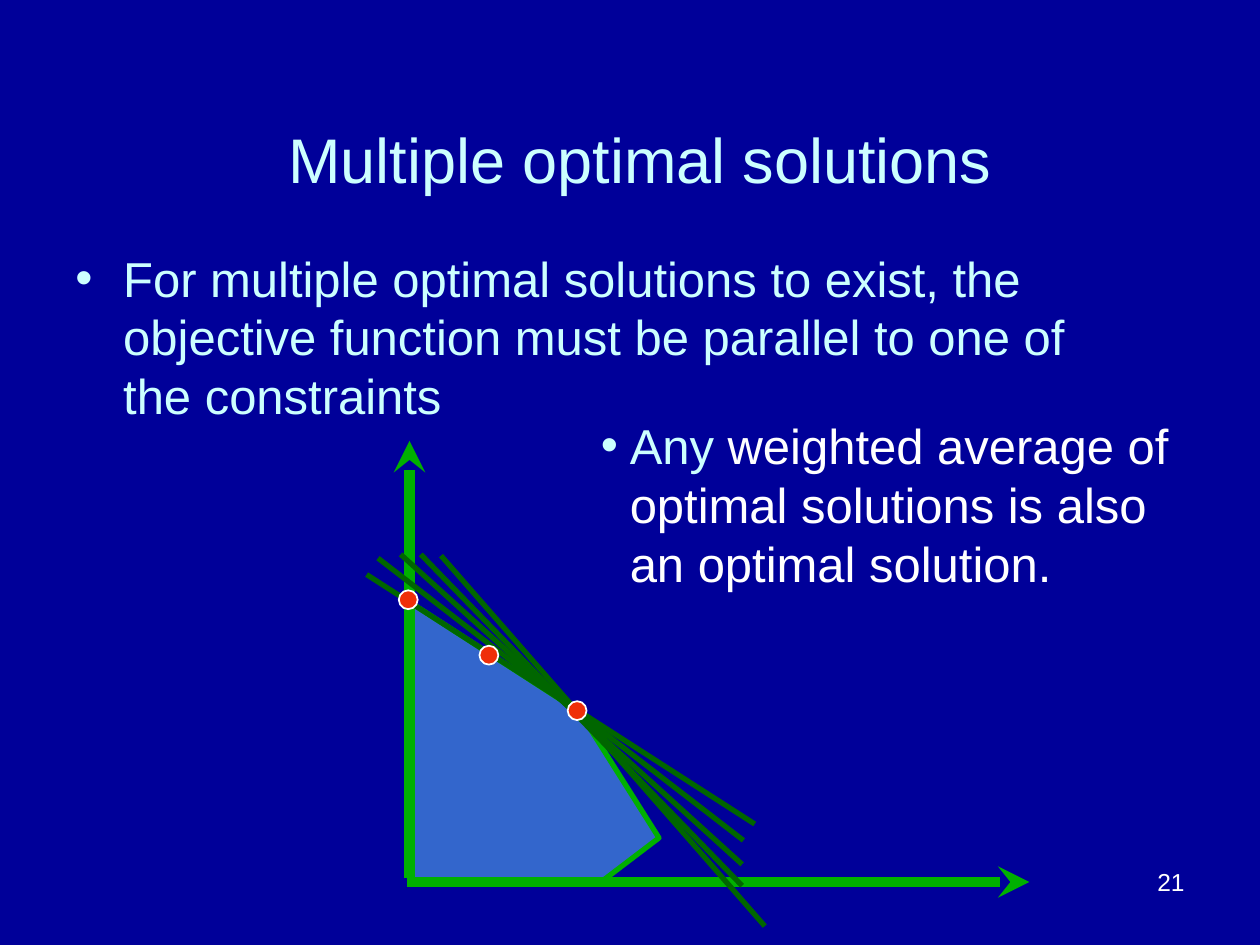
from dataclasses import dataclass
from lxml.etree import SubElement
from pptx import Presentation
from pptx.dml.color import RGBColor
from pptx.enum.shapes import MSO_CONNECTOR, MSO_SHAPE
from pptx.enum.text import MSO_ANCHOR, PP_ALIGN
from pptx.oxml.ns import qn
from pptx.util import Inches, Pt


@dataclass(frozen=True)
class Theme:
    back: str = "000099"
    pale: str = "CCFFFF"
    white: str = "FFFFFF"
    axis: str = "00B000"
    line: str = "006600"
    area: str = "3366CC"
    dot: str = "EF2F09"
    font: str = "Arial"
    head: int = 36
    body: int = 28
    note: int = 14


THEME = Theme()
TITLE = "Multiple optimal solutions"
# box, hanging indent, runs of (text, colour)
POINTS = [
    ((0.5, 1.92, 8.67, 2.08), 0.38, [
        ("For multiple optimal solutions to exist, the objective function "
         "must be parallel to one of the constraints", THEME.pale)]),
    ((4.67, 3.25, 4.77, 1.9), 0.23, [
        ("Any", THEME.pale),
        (" weighted average of optimal solutions is also an optimal solution.",
         THEME.white)]),
]
REGION = [(3.25, 6.96), (3.27, 4.79), (4.6, 5.65), (5.23, 6.65), (4.77, 7)]
AXES = [((3.25, 6.97), (3.25, 3.5)), ((3.23, 7), (8.17, 7))]
GOALS = [
    ((3.5, 4.41), (6.07, 7.35)),
    ((3.34, 4.4), (5.89, 7.03)),
    ((3.18, 4.4), (5.89, 6.86)),
    ((3, 4.43), (5.9, 6.67)),
    ((2.91, 4.56), (5.99, 6.54)),
]
DOT = 0.15
DOTS = [(3.88, 5.2), (3.24, 4.76), (4.58, 5.64)]


def color(code):
    return RGBColor.from_string(code)


def style(font, size, code):
    font.name, font.size = THEME.font, Pt(size)
    font.color.rgb = color(code)


def paint(shape, fill, edge, width):
    shape.shadow.inherit = False
    shape.fill.solid()
    shape.fill.fore_color.rgb = color(fill)
    shape.line.color.rgb = color(edge)
    shape.line.width = Pt(width)


def add_box(slide, box):
    frame = slide.shapes.add_textbox(*map(Inches, box)).text_frame
    frame.word_wrap = True
    return frame.paragraphs[0]


def add_point(slide, box, indent, runs):
    para = add_box(slide, box)
    para.space_before = Pt(THEME.body * 0.2)
    props = para._p.get_or_add_pPr()
    props.set("marL", str(Inches(indent)))
    props.set("indent", str(-Inches(indent)))
    SubElement(props, qn("a:buFont")).set("typeface", THEME.font)
    SubElement(props, qn("a:buChar")).set("char", "•")
    for text, code in runs:
        run = para.add_run()
        run.text = text
        style(run.font, THEME.body, code)


def add_line(slide, start, end, code, width, arrow=False):
    line = slide.shapes.add_connector(
        MSO_CONNECTOR.STRAIGHT, *map(Inches, start + end))
    line.line.color.rgb = color(code)
    line.line.width = Pt(width)
    if arrow:
        SubElement(line.line._get_or_add_ln(), qn("a:tailEnd")).set(
            "type", "stealth")
    SubElement(line._element.spPr, qn("a:effectLst"))


def add_graph(slide):
    first, *rest = [tuple(map(Inches, spot)) for spot in REGION]
    build = slide.shapes.build_freeform(*first)
    build.add_line_segments(rest, close=False)
    paint(build.convert_to_shape(), THEME.area, THEME.axis, 3)
    for start, end in AXES:
        add_line(slide, start, end, THEME.axis, 6, arrow=True)
    for start, end in GOALS:
        add_line(slide, start, end, THEME.line, 3)


def add_dots(slide):
    for x, y in DOTS:
        box = (x - DOT / 2, y - DOT / 2, DOT, DOT)
        dot = slide.shapes.add_shape(MSO_SHAPE.OVAL, *map(Inches, box))
        paint(dot, THEME.dot, THEME.white, 1)


def set_title(slide):
    title = slide.shapes.title
    title.left, title.top, title.width, title.height = map(
        Inches, (0.33, 0.92, 9.5, 0.67))
    title.text_frame.text = TITLE
    title.text_frame.vertical_anchor = MSO_ANCHOR.MIDDLE
    para = title.text_frame.paragraphs[0]
    para.alignment = PP_ALIGN.CENTER
    style(para.font, THEME.head, THEME.pale)


def add_number(slide):
    para = add_box(slide, (7.17, 6.83, 2.33, 0.52))
    para.text = "21"
    para.alignment = PP_ALIGN.RIGHT
    style(para.font, THEME.note, THEME.white)


def main():
    deck = Presentation()
    deck.slide_width, deck.slide_height = Inches(10), Inches(7.5)
    slide = deck.slides.add_slide(deck.slide_layouts[5])
    slide.background.fill.solid()
    slide.background.fill.fore_color.rgb = color(THEME.back)
    set_title(slide)
    add_number(slide)
    add_graph(slide)
    for point in POINTS:
        add_point(slide, *point)
    add_dots(slide)
    deck.save("out.pptx")


if __name__ == "__main__":
    main()
